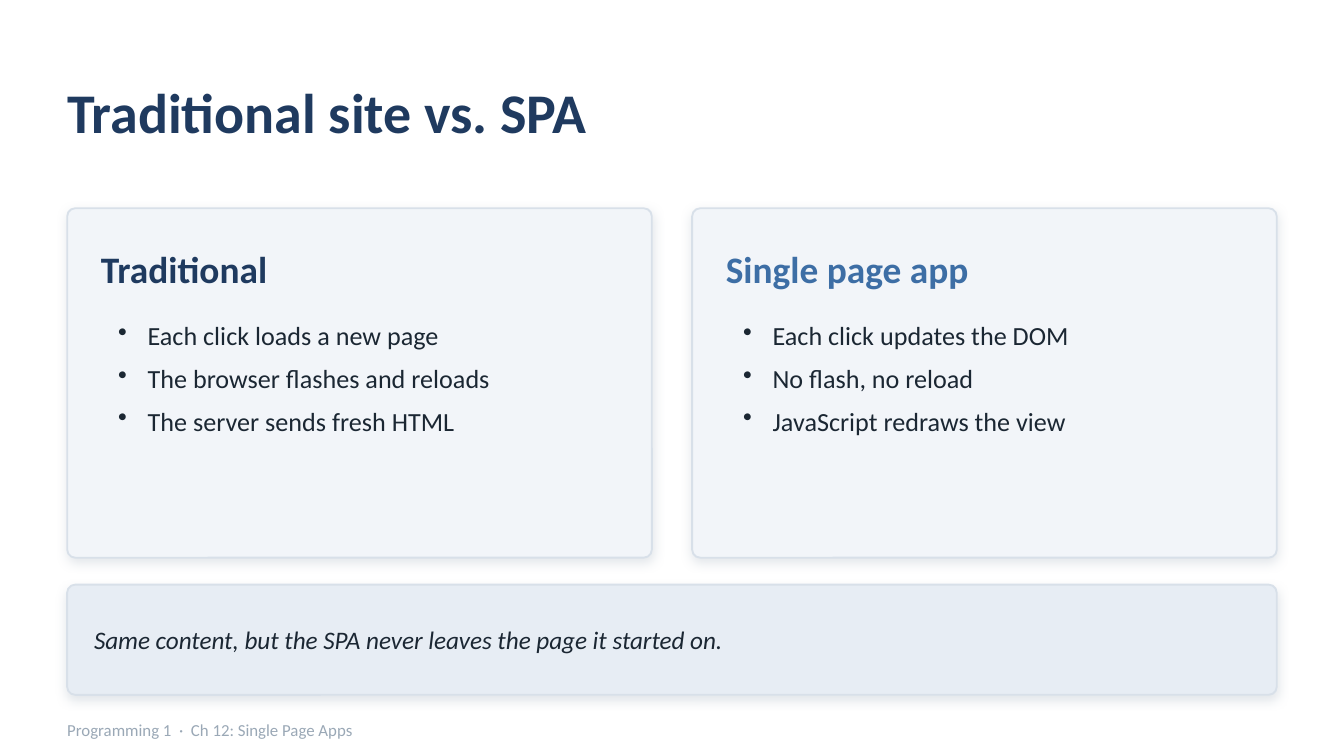
from lxml import etree
from pptx import Presentation
from pptx.dml.color import RGBColor
from pptx.enum.shapes import MSO_SHAPE
from pptx.enum.text import MSO_ANCHOR
from pptx.oxml.ns import qn
from pptx.util import Emu, Inches, Pt

ROUNDED = MSO_SHAPE.ROUNDED_RECTANGLE
MIDDLE, TOP = MSO_ANCHOR.MIDDLE, MSO_ANCHOR.TOP

# Content
TITLE = "Traditional site vs. SPA"
CARDS = [
    ("Traditional", "navy", [
        "Each click loads a new page",
        "The browser flashes and reloads",
        "The server sends fresh HTML",
    ]),
    ("Single page app", "blue", [
        "Each click updates the DOM",
        "No flash, no reload",
        "JavaScript redraws the view",
    ]),
]
SUMMARY = "Same content, but the SPA never leaves the page it started on."
FOOTER = "Programming 1  ·  Ch 12: Single Page Apps"

# Style
FONT = "Calibri"
COLORS = {
    "white": "FFFFFF", "navy": "1F3A5F", "blue": "3D6EA5", "ink": "1B2733",
    "muted": "9AA8B6", "card": "F2F5F9", "band": "E7EDF4", "border": "D8E0E9",
}

# Grid, in inches, on a 16:9 page
WIDTH = 10
HEIGHT = WIDTH * 9 / 16
MARGIN, GUTTER = 0.5, 0.3
CONTENT_WIDTH = WIDTH - 2 * MARGIN
CARD_WIDTH = (CONTENT_WIDTH - GUTTER * (len(CARDS) - 1)) / len(CARDS)
CARD_TOP, CARD_HEIGHT, CARD_PAD = 1.55, 2.6, 0.25
BAND_TOP, BAND_HEIGHT, BAND_PAD = 4.35, 0.82, 0.2
CORNER = 0.06
BULLET_INDENT = 0.22


def color(name):
    return RGBColor.from_string(COLORS[name])


def add_shadow(shape):
    effects = etree.SubElement(shape._element.spPr, qn("a:effectLst"))
    shadow = etree.SubElement(
        effects, qn("a:outerShdw"), blurRad=str(Pt(6)), dist=str(Pt(2)),
        dir=str(90 * 60000), algn="bl", rotWithShape="0")
    tint = etree.SubElement(shadow, qn("a:srgbClr"), val=COLORS["muted"])
    etree.SubElement(tint, qn("a:alpha"), val="28000")


def add_panel(page, left, top, width, height, fill):
    panel = page.shapes.add_shape(
        ROUNDED, Inches(left), Inches(top), Inches(width), Inches(height))
    panel.adjustments[0] = CORNER / height
    panel.fill.solid()
    panel.fill.fore_color.rgb = color(fill)
    panel.line.color.rgb = color("border")
    panel.line.width = Pt(1)
    add_shadow(panel)


def make_bullet(para, size):
    props = para._p.get_or_add_pPr()
    props.set("marL", str(Inches(BULLET_INDENT)))
    props.set("indent", str(-Inches(BULLET_INDENT)))
    para.space_after = Pt(6)
    etree.SubElement(props, qn("a:buSzPct"), val="100000")
    etree.SubElement(props, qn("a:buChar"), char="•")
    # The paragraph mark sets the size of the bullet
    etree.SubElement(para._p, qn("a:endParaRPr"), sz=str(int(size * 100)))


def add_text(page, left, top, width, height, lines, size, tone,
             bold=False, italic=False, bullets=False):
    box = page.shapes.add_textbox(
        Inches(left), Inches(top), Inches(width), Inches(height))
    frame = box.text_frame
    frame.word_wrap = True
    frame.vertical_anchor = TOP if bullets else MIDDLE
    if not bullets:
        frame.margin_left = frame.margin_right = Emu(0)
        frame.margin_top = frame.margin_bottom = Emu(0)
    for index, line in enumerate(lines):
        para = frame.add_paragraph() if index else frame.paragraphs[0]
        if bullets:
            make_bullet(para, size)
        span = para.add_run()
        span.text = line
        span.font.name = FONT
        span.font.size = Pt(size)
        span.font.bold = bold
        span.font.italic = italic
        span.font.color.rgb = color(tone)


def main():
    deck = Presentation()
    deck.slide_width, deck.slide_height = Inches(WIDTH), Inches(HEIGHT)
    page = deck.slides.add_slide(deck.slide_layouts[6])
    page.background.fill.solid()
    page.background.fill.fore_color.rgb = color("white")

    # Title
    add_text(page, MARGIN, 0.4, CONTENT_WIDTH, 0.85, [TITLE], 30, "navy", bold=True)

    # Comparison cards
    text_width = CARD_WIDTH - 2 * CARD_PAD
    for column, (heading, tone, points) in enumerate(CARDS):
        left = MARGIN + column * (CARD_WIDTH + GUTTER)
        inner = left + CARD_PAD
        add_panel(page, left, CARD_TOP, CARD_WIDTH, CARD_HEIGHT, "card")
        add_text(page, inner, CARD_TOP + 0.2, text_width, 0.5,
                 [heading], 20, tone, bold=True)
        add_text(page, inner + 0.03, CARD_TOP + 0.78, text_width, 1.6,
                 points, 14, "ink", bullets=True)

    # Summary band
    add_panel(page, MARGIN, BAND_TOP, CONTENT_WIDTH, BAND_HEIGHT, "band")
    add_text(page, MARGIN + BAND_PAD, BAND_TOP + 0.05, CONTENT_WIDTH - 2 * BAND_PAD,
             BAND_HEIGHT - 0.1, [SUMMARY], 13.5, "ink", italic=True)

    # Footer
    add_text(page, MARGIN, 5.3, 8, 0.26, [FOOTER], 9, "muted")

    deck.save("out.pptx")


if __name__ == "__main__":
    main()
